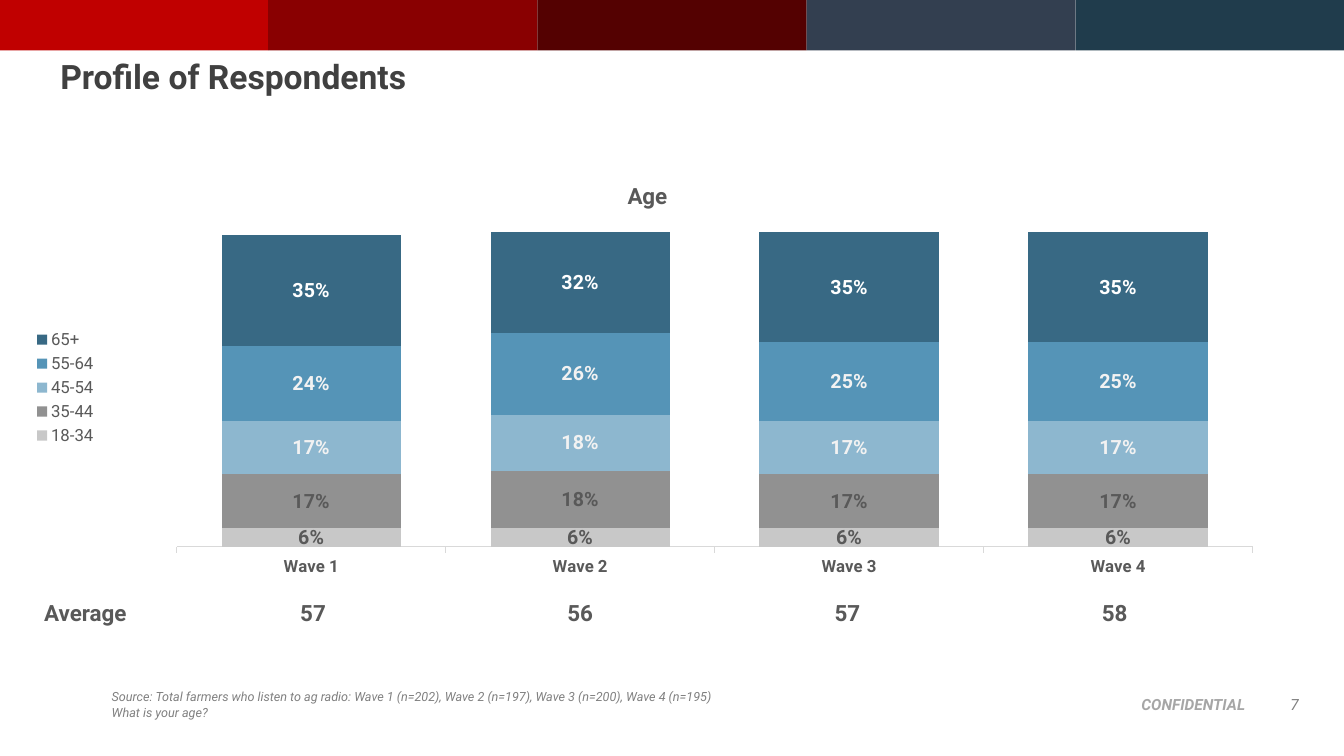
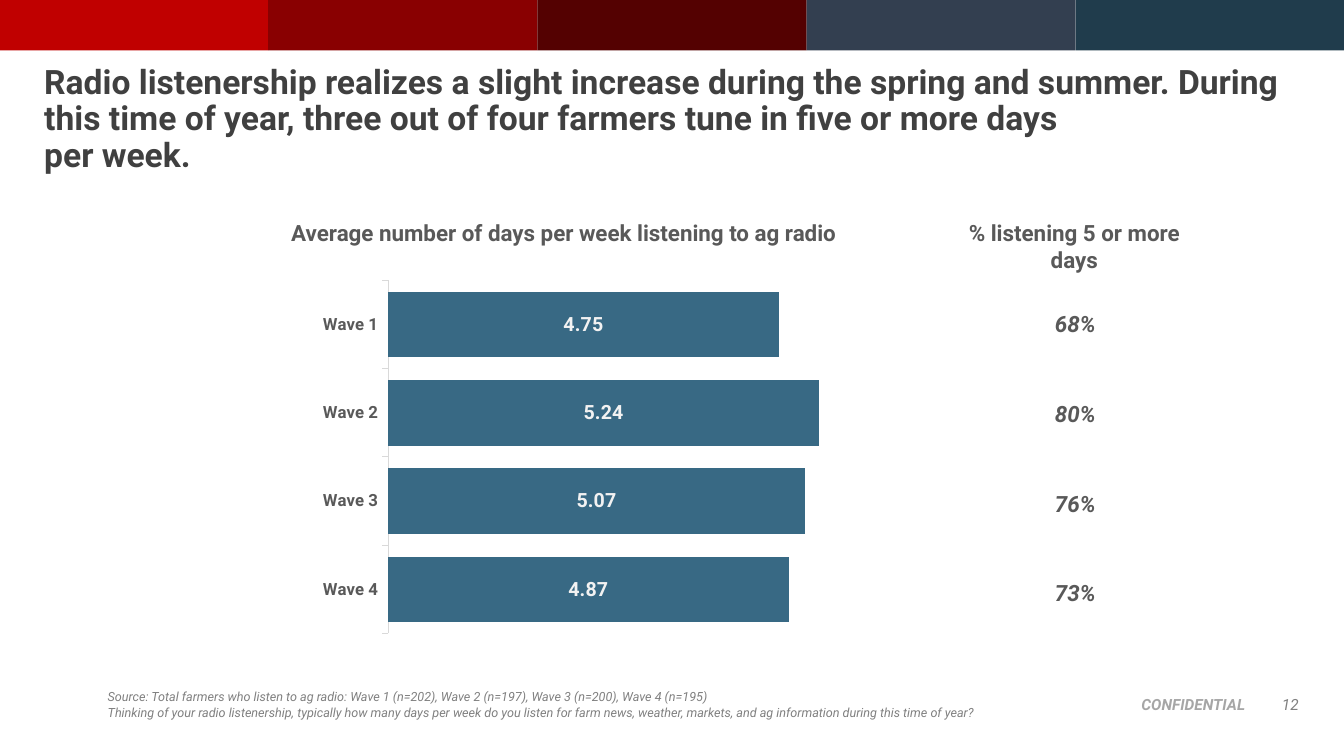
import pptx
import pptx.chart.data
import pptx.dml.color
import pptx.enum.chart
import pptx.enum.shapes
import pptx.enum.text
import pptx.oxml.ns
import pptx.util
from lxml import etree

PX = 9144  # EMU per px, 100 px to the inch
FONT = "Roboto"
COLORS = {
    "title": "404040", "text": "595959", "note": "808080", "mark": "A6A6A6",
    "axis": "D9D9D9", "white": "FFFFFF", "pale": "F2F2F2",
    "silver": "C8C8C8", "gray": "919191", "sky": "8DB7CF",
    "blue": "5594B7", "navy": "386984",
}
BANDS = ["C00000", "890001", "540101", "333F50", "203C4C"]
BAND_W, BAND_H = 267, 50
SOURCE = ("Source: Total farmers who listen to ag radio: Wave 1 (n=202), "
          "Wave 2 (n=197), Wave 3 (n=200), Wave 4 (n=195)")
WAVES = ["Wave 1", "Wave 2", "Wave 3", "Wave 4"]

ALIGN = pptx.enum.text.PP_ALIGN
ANCHOR = pptx.enum.text.MSO_ANCHOR
XL = pptx.enum.chart


def px(*values):
    return [pptx.util.Emu(v * PX) for v in values]


def rgb(value):
    return pptx.dml.color.RGBColor.from_string(value)


def style_font(font, size, color, bold=False, italic=False):
    font.name = FONT
    font.size = pptx.util.Pt(size)
    font.bold = bold
    font.italic = italic
    font.color.rgb = rgb(COLORS[color])


def add_text(slide, box, lines, size, color, bold=False, italic=False,
             align=ALIGN.LEFT, anchor=ANCHOR.TOP, spacing=None):
    """Text box with one paragraph per line; "\n" in a line is a line break."""
    tf = slide.shapes.add_textbox(*px(*box)).text_frame
    tf.word_wrap = True
    tf.vertical_anchor = anchor
    for i, line in enumerate(lines):
        p = tf.paragraphs[0] if i == 0 else tf.add_paragraph()
        p.alignment = align
        if spacing:
            p.line_spacing = spacing
        for j, part in enumerate(line.split("\n")):
            if j:
                p.add_line_break()
            r = p.add_run()
            r.text = part
            style_font(r.font, size, color, bold, italic)


def add_label(slide, box, text, align=ALIGN.CENTER, italic=False):
    add_text(slide, box, [text], 16, "text", True, italic, align)


def add_frame(prs, title, title_box, title_anchor, number, notes, notes_left):
    """New slide with the bands, title and footer that all slides share."""
    slide = prs.slides.add_slide(prs.slide_layouts[6])
    for i, color in enumerate(BANDS):
        sp = slide.shapes.add_shape(pptx.enum.shapes.MSO_SHAPE.RECTANGLE,
                                    *px(BAND_W * i - 1, 0, BAND_W, BAND_H))
        sp.shadow.inherit = False
        sp.fill.solid()
        sp.fill.fore_color.rgb = rgb(color)
        sp.line.fill.background()
    add_text(slide, title_box, [title], 24, "title", True,
             anchor=title_anchor, spacing=0.9)
    add_text(slide, (1098, 685, 147, 29), ["CONFIDENTIAL"], 11, "mark",
             True, True, ALIGN.RIGHT)
    add_text(slide, (1242, 679, 56, 40), [number], 11, "note",
             italic=True, align=ALIGN.RIGHT, anchor=ANCHOR.MIDDLE)
    add_text(slide, (notes_left, 679, 952, 40), notes, 9, "note", italic=True)
    return slide


def set_plot_layout(chart, box):
    """Fix the inner plot area as fractions of the chart: x, y, w, h."""
    qn = pptx.oxml.ns.qn
    area = chart.element.find(".//" + qn("c:plotArea"))
    for old in area.findall(qn("c:layout")):
        area.remove(old)
    layout = etree.Element(qn("c:layout"))
    area.insert(0, layout)
    manual = etree.SubElement(layout, qn("c:manualLayout"))
    settings = [("layoutTarget", "inner"), ("xMode", "edge"), ("yMode", "edge")]
    settings += zip("xywh", box)
    for tag, value in settings:
        etree.SubElement(manual, qn("c:" + tag)).set("val", str(value))


def add_stacked_chart(slide, kind, box, cats, series, fmt, label_fmt,
                      top, gap, plot):
    """Stacked chart; series rows are name, values, fill and label colour."""
    data = pptx.chart.data.CategoryChartData(number_format=fmt)
    data.categories = cats
    for name, values, _, _ in series:
        data.add_series(name, values)
    chart = slide.shapes.add_chart(kind, *px(*box), data).chart
    style_font(chart.font, 10, "text")
    chart.has_title = False
    chart.has_legend = False

    # Axes
    axis = chart.category_axis
    axis.major_tick_mark = XL.XL_TICK_MARK.OUTSIDE
    axis.has_major_gridlines = False
    style_font(axis.tick_labels.font, 12, "text", True)
    axis.format.line.color.rgb = rgb(COLORS["axis"])
    axis.format.line.width = pptx.util.Pt(0.75)
    scale = chart.value_axis
    scale.minimum_scale, scale.maximum_scale = 0, top
    scale.has_major_gridlines = False
    scale.visible = False

    # Bars and their labels
    bars = chart.plots[0]
    bars.vary_by_categories = False
    bars.gap_width, bars.overlap = gap, 100
    for s, (_, _, fill, label_color) in zip(bars.series, series):
        s.format.fill.solid()
        s.format.fill.fore_color.rgb = rgb(COLORS[fill])
        labels = s.data_labels
        labels.show_value = True
        labels.number_format = label_fmt
        labels.number_format_is_linked = False
        labels.position = XL.XL_LABEL_POSITION.CENTER
        style_font(labels.font, 14, label_color, True)
    set_plot_layout(chart, plot)
    return chart


def add_age_slide(prs):
    slide = add_frame(prs, "Profile of Respondents", (50, 55, 1233, 126),
                      ANCHOR.TOP, "7", [SOURCE, "What is your age?"], 101)
    ages = [
        ("18-34", (0.06, 0.06, 0.06, 0.06), "silver", "text"),
        ("35-44", (0.17, 0.18, 0.17, 0.17), "gray", "text"),
        ("45-54", (0.17, 0.18, 0.17, 0.17), "sky", "pale"),
        ("55-64", (0.24, 0.26, 0.25, 0.25), "blue", "pale"),
        ("65+", (0.35, 0.32, 0.35, 0.35), "navy", "white"),
    ]
    chart = add_stacked_chart(
        slide, XL.XL_CHART_TYPE.COLUMN_STACKED, (23, 162, 1238, 445), WAVES,
        ages, "0%", "0%", 1, 50, (0.123, 0.154, 0.862, 0.701))
    chart.has_title = True
    r = chart.chart_title.text_frame.paragraphs[0].add_run()
    r.text = "Age"
    style_font(r.font, 16, "text", True)
    chart.has_legend = True
    chart.legend.position = XL.XL_LEGEND_POSITION.LEFT
    chart.legend.include_in_layout = False
    style_font(chart.legend.font, 12, "text")

    # Average row
    add_label(slide, (34, 589, 107, 37), "Average", ALIGN.LEFT)
    for i, average in enumerate(["57", "56", "57", "58"]):
        add_label(slide, (257 + 265 * i, 589, 107, 37), average)


def add_days_slide(prs):
    title = ("Radio listenership realizes a slight increase during the spring "
             "and summer. During this time of year, three out of four farmers "
             "tune in five or more days \nper week.")
    question = ("Thinking of your radio listenership, typically how many days "
                "per week do you listen for farm news, weather, markets, and "
                "ag information during this time of year?")
    slide = add_frame(prs, title, (34, 56, 1265, 126), ANCHOR.MIDDLE, "12",
                      [SOURCE, question], 97)
    days = [("Series 1", (4.87, 5.07, 5.24, 4.75), "navy", "pale")]
    chart = add_stacked_chart(
        slide, XL.XL_CHART_TYPE.BAR_STACKED, (218, 195, 897, 434), WAVES[::-1],
        days, "0.00", "#,##0.00", 7, 35, (0.186, 0.192, 0.637, 0.807))
    chart.value_axis.major_unit = 1

    # Headings and share column
    add_label(slide, (279, 213, 604, 37),
              "Average number of days per week listening to ag radio",
              ALIGN.LEFT)
    add_label(slide, (943, 213, 245, 64), "% listening 5 or more days")
    for i, share in enumerate(["68%", "80%", "76%", "73%"]):
        add_label(slide, (994, 303 + 89 * i, 145, 37), share, italic=True)


def main():
    prs = pptx.Presentation()
    prs.slide_width, prs.slide_height = px(1333, 750)
    add_age_slide(prs)
    add_days_slide(prs)
    prs.save("out.pptx")


if __name__ == "__main__":
    main()
